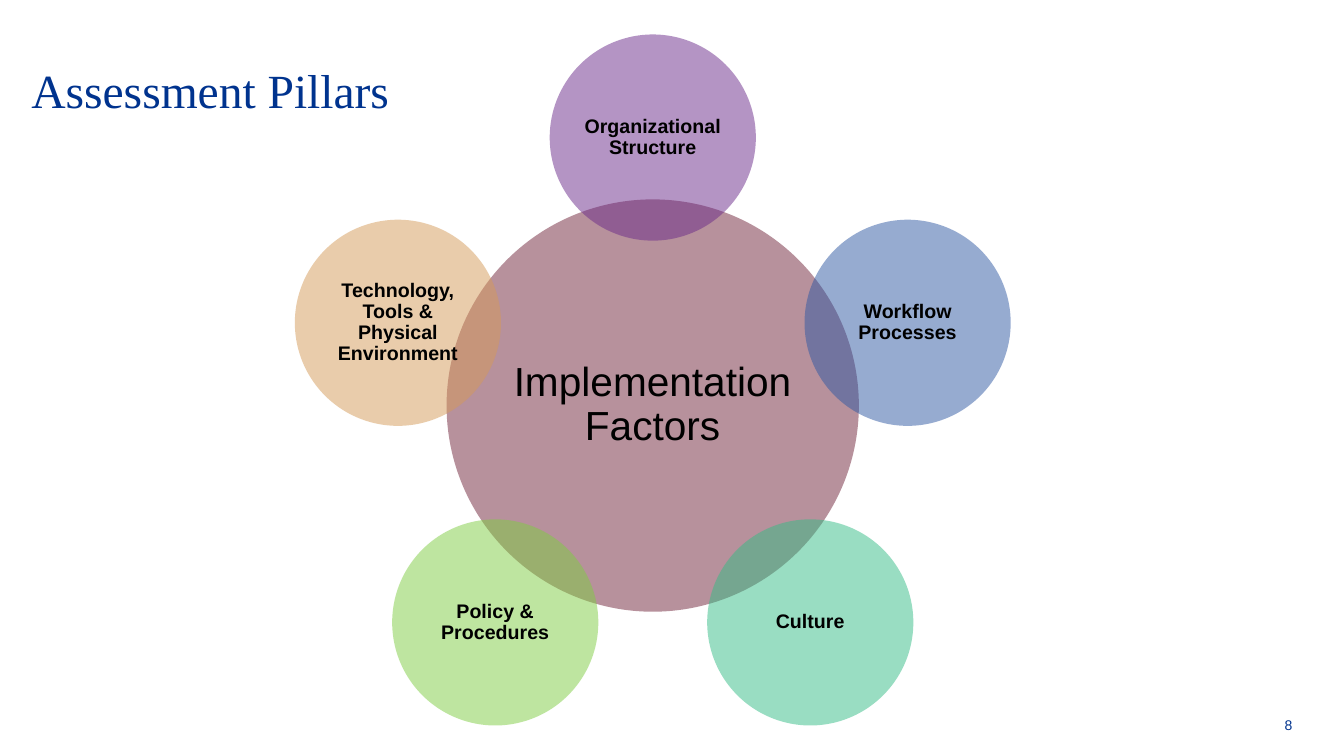
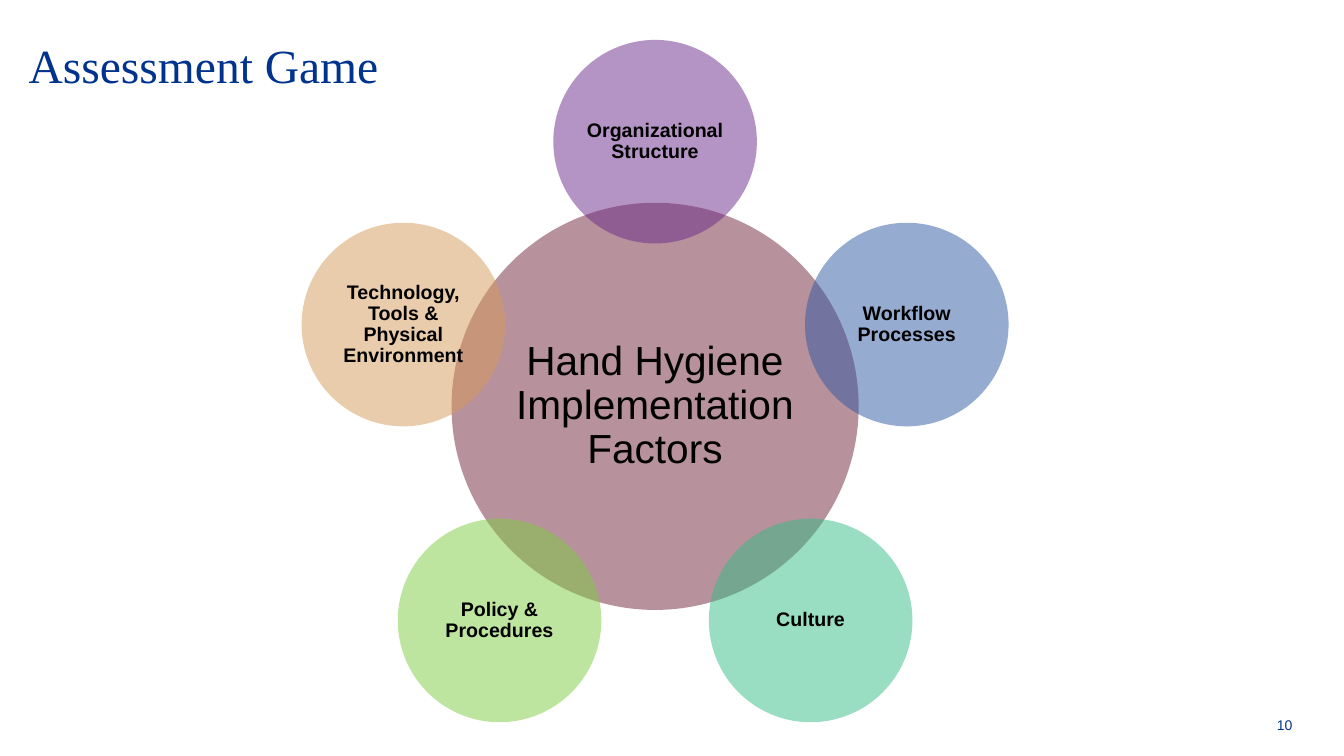
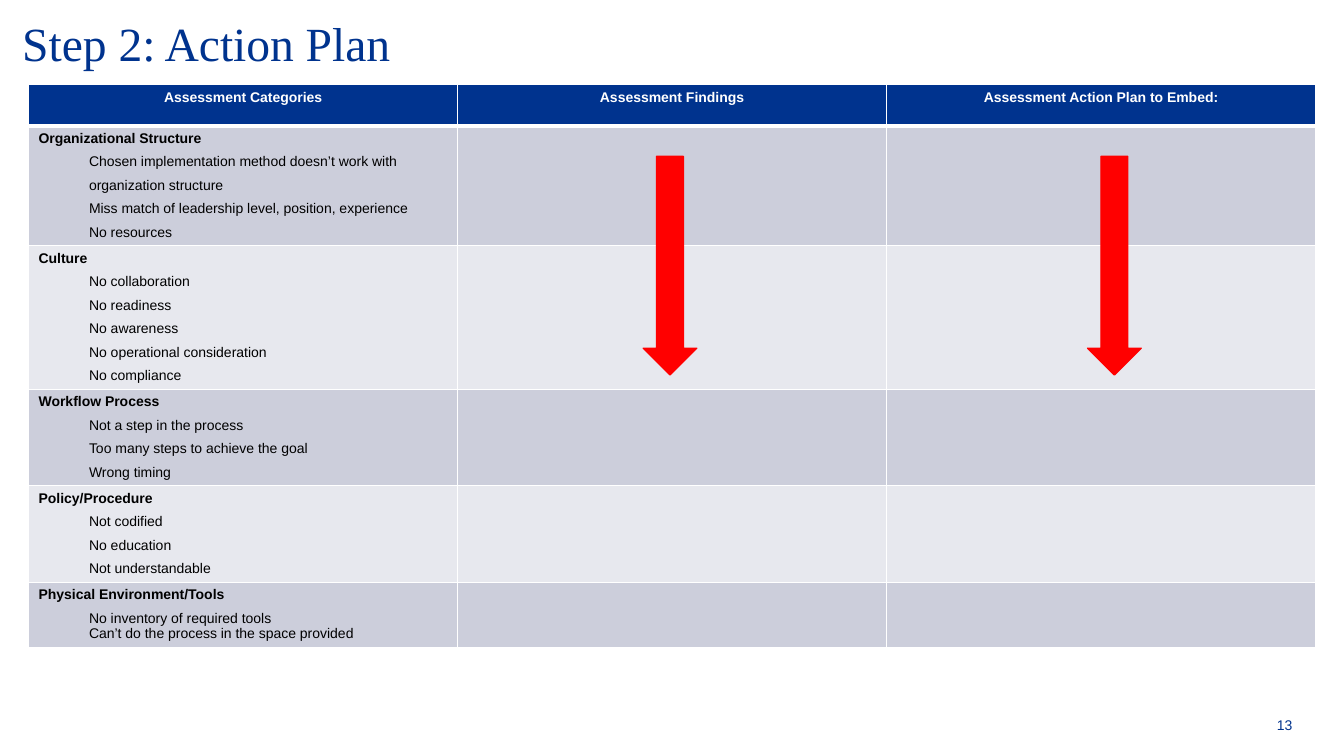
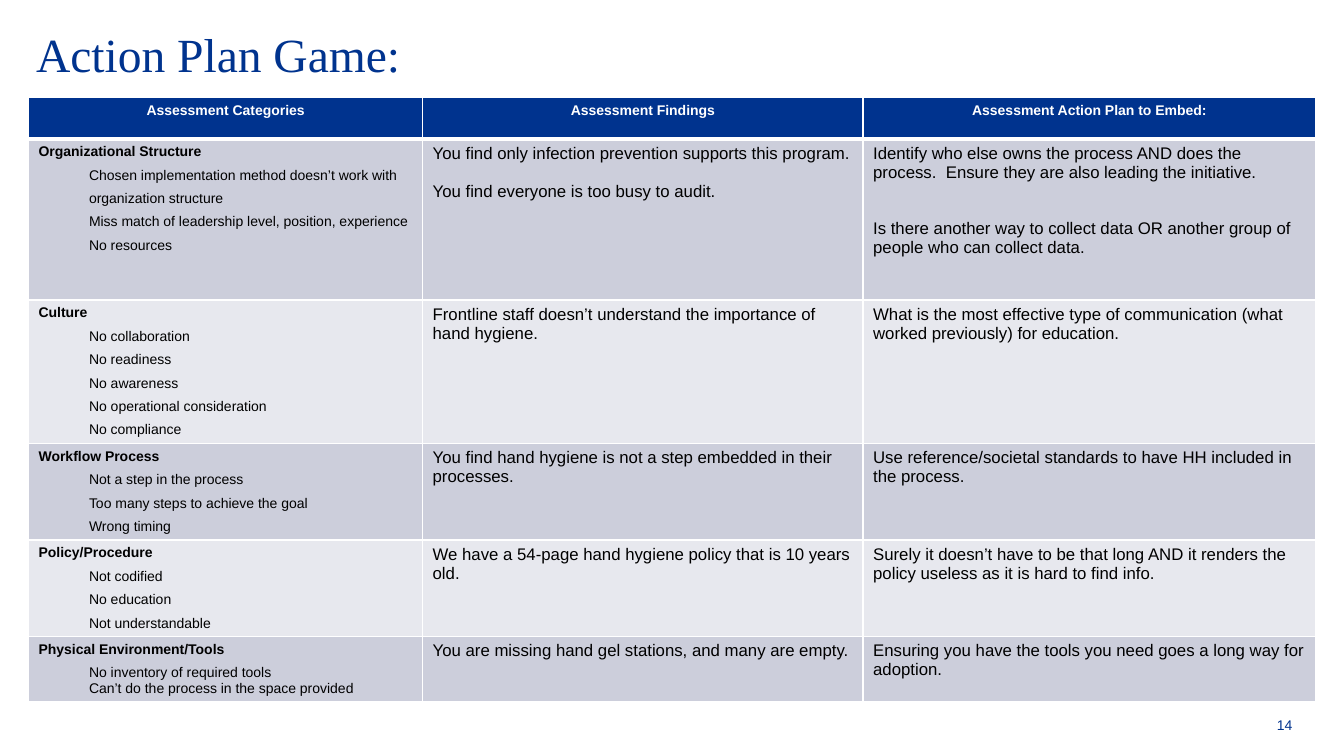
"""Build four slides on assessment pillars and action plans."""
from math import cos, pi, sin

from lxml.etree import SubElement
from pptx import Presentation
from pptx.dml.color import RGBColor
from pptx.enum.shapes import MSO_SHAPE as Shape
from pptx.enum.text import MSO_ANCHOR as Anchor, MSO_AUTO_SIZE as AutoSize, PP_ALIGN as Align
from pptx.oxml.ns import qn
from pptx.util import Cm, Pt

COLORS = {
    "navy": "00338E", "white": "FFFFFF", "black": "000000", "red": "FF0000",
    "band_dark": "CCCEDB", "band_light": "E7E8EE", "hub": "71243A",
    "structure": "6B2A8A", "workflow": "2F59A3", "culture": "34BC86",
    "policy": "7FCD42", "technology": "D59A59",
}
RGB = {name: RGBColor.from_string(code) for name, code in COLORS.items()}

deck = Presentation()
deck.slide_width, deck.slide_height = Cm(33.87), Cm(19.05)


def style(paragraph, size, color="black", bold=False, align=Align.LEFT, face="Arial"):
    """Format a paragraph and its runs."""
    paragraph.alignment = align
    for run in paragraph.runs:
        run.font.name, run.font.size, run.font.bold = face, Pt(size), bold
        run.font.color.rgb = RGB[color]


def start_slide(heading, left, bottom, number):
    """Add a slide with its title and page number."""
    slide = deck.slides.add_slide(deck.slide_layouts[5])
    title = slide.shapes.title
    title.left, title.top, title.width, title.height = Cm(left), Cm(bottom - 1.5), Cm(31.3), Cm(1.5)
    page = slide.shapes.add_textbox(Cm(31.2), Cm(17.86), Cm(1.37), Cm(0.63))
    for box, text, right_margin in ((title, heading, 5.08), (page, number, 0)):
        frame = box.text_frame
        frame.text = text
        frame.word_wrap, frame.auto_size = True, AutoSize.NONE
        frame.vertical_anchor = Anchor.BOTTOM
        frame.margin_left = frame.margin_top = frame.margin_bottom = 0
        frame.margin_right = Cm(right_margin)
    style(title.text_frame.paragraphs[0], 34, "navy", face="Times New Roman")
    title.text_frame.paragraphs[0].line_spacing = Pt(34)
    style(page.text_frame.paragraphs[0], 10, "navy", align=Align.RIGHT)
    return slide


PILLARS = [
    ("Organizational Structure", "structure"),
    ("Workflow Processes", "workflow"),
    ("Culture", "culture"),
    ("Policy & Procedures", "policy"),
    ("Technology, Tools & Physical Environment", "technology"),
]
WHEELS = [
    ("Assessment Pillars", 0.79, 2.97, "8", "Implementation Factors", 16.45, 10.22, 10.39),
    ("Assessment Game", 0.72, 2.34, "10", "Hand Hygiene Implementation Factors", 16.51, 10.24, 10.26),
]
for heading, left, bottom, number, hub_text, center_x, center_y, hub_size in WHEELS:
    slide = start_slide(heading, left, bottom, number)
    circles = [(hub_text, "hub", center_x, center_y, hub_size, 29, False, 0.1)]
    orbit = 0.65 * hub_size
    for position, (pillar, color) in enumerate(PILLARS):
        angle = 2 * pi * position / len(PILLARS)
        x, y = center_x + orbit * sin(angle), center_y - orbit * cos(angle)
        circles.append((pillar, color, x, y, hub_size / 2, 14, True, 0.05))
    for text, color, x, y, size, points, bold, margin in circles:
        circle = slide.shapes.add_shape(
            Shape.OVAL, Cm(x - size / 2), Cm(y - size / 2), Cm(size), Cm(size))
        circle.shadow.inherit = False
        circle.line.fill.background()
        circle.fill.solid()
        circle.fill.fore_color.rgb = RGB[color]
        tint = circle.fill._xPr.find(qn("a:solidFill"))[0]
        SubElement(tint, qn("a:alpha"), val="50000")
        frame = circle.text_frame
        frame.text = text
        frame.word_wrap, frame.vertical_anchor = True, Anchor.MIDDLE
        frame.margin_left = frame.margin_right = Cm(margin)
        frame.margin_top = frame.margin_bottom = Cm(margin)
        style(frame.paragraphs[0], points, bold=bold, align=Align.CENTER)
        frame.paragraphs[0].line_spacing = 0.9

HEADERS = ["Assessment Categories", "Assessment Findings", "Assessment Action Plan to Embed:"]
CATEGORIES = [
    ("Organizational Structure", [
        "Chosen implementation method doesn’t work with organization structure",
        "Miss match of leadership level, position, experience",
        "No resources"]),
    ("Culture", [
        "No collaboration", "No readiness", "No awareness",
        "No operational consideration", "No compliance"]),
    ("Workflow Process", [
        "Not a step in the process", "Too many steps to achieve the goal", "Wrong timing"]),
    ("Policy/Procedure", ["Not codified", "No education", "Not understandable"]),
    ("Physical Environment/Tools", [
        "No inventory of required tools", "Can’t do the process in the space provided"]),
]
GAME_ANSWERS = [
    (["You find only infection prevention supports this program.",
      "You find everyone is too busy to audit."],
     ["Identify who else owns the process AND does the process.  "
      "Ensure they are also leading the initiative.",
      "Is there another way to collect data OR another group of people who can collect data."]),
    (["Frontline staff doesn’t understand the importance of hand hygiene."],
     ["What is the most effective type of communication (what worked previously) for education."]),
    (["You find hand hygiene is not a step embedded in their processes."],
     ["Use reference/societal standards to have HH included in the process."]),
    (["We have a 54-page hand hygiene policy that is 10 years old."],
     ["Surely it doesn’t have to be that long AND it renders the policy useless "
      "as it is hard to find info."]),
    (["You are missing hand gel stations, and many are empty."],
     ["Ensuring you have the tools you need goes a long way for adoption."]),
]
ANSWER_GAPS = [0, 13.6, 27.2]
PLANS = [
    ("Step 2: Action Plan", 0.56, 1.8, "13", 2.13, [10.81] * 3, 3.02, [([], [])] * 5),
    ("Action Plan Game:", 0.91, 2.08, "14", 2.46, [9.93, 11.1, 11.4], 4.06, GAME_ANSWERS),
]
for heading, left, bottom, number, top, widths, first_height, answers in PLANS:
    slide = start_slide(heading, left, bottom, number)
    heights = [1.04, first_height, 3.62, 2.43, 2.43, 1.64]
    plan = slide.shapes.add_table(
        len(heights), len(widths), Cm(0.72), Cm(top), Cm(sum(widths)), Cm(sum(heights))).table
    plan.horz_banding = False
    for column, width in zip(plan.columns, widths):
        column.width = Cm(width)
    for row, height in zip(plan.rows, heights):
        row.height = Cm(height)

    contents = [[[header] for header in HEADERS]]
    for (category, factors), (findings, actions) in zip(CATEGORIES, answers):
        contents.append([[category, *factors], findings, actions])
    for r, row_texts in enumerate(contents):
        for c, texts in enumerate(row_texts):
            cell = plan.cell(r, c)
            for side in "LRTB":
                heavy = (r, side) in ((0, "B"), (1, "T"))
                border = SubElement(cell._tc.get_or_add_tcPr(), qn(f"a:ln{side}"),
                                    w=str(Pt(3 if heavy else 1)))
                SubElement(SubElement(border, qn("a:solidFill")), qn("a:srgbClr"),
                           val=COLORS["white"])
            cell.fill.solid()
            cell.fill.fore_color.rgb = RGB["navy" if r == 0 else "band_dark" if r % 2 else "band_light"]
            cell.text_frame.text = "\n".join(texts)
            for i, paragraph in enumerate(cell.text_frame.paragraphs):
                if r == 0:
                    style(paragraph, 10, "white", True, Align.CENTER)
                elif c > 0:
                    style(paragraph, 12)
                    if i:
                        paragraph.space_before = Pt(ANSWER_GAPS[c])
                else:
                    style(paragraph, 10, bold=i == 0)
                    if i:
                        paragraph._p.get_or_add_pPr().set("marL", str(Cm(1.27)))
                        last_tool = r == len(CATEGORIES) and i == len(texts) - 1
                        paragraph.line_spacing = 1.0 if last_tool else 1.5

    if number == "13":
        for arrow_left in (16.21, 27.41):
            arrow = slide.shapes.add_shape(
                Shape.DOWN_ARROW, Cm(arrow_left), Cm(3.94), Cm(1.35), Cm(5.51))
            arrow.shadow.inherit = False
            arrow.fill.solid()
            arrow.fill.fore_color.rgb = RGB["red"]
            arrow.line.color.rgb = RGB["red"]
            arrow.line.width = Pt(1)

deck.save("out.pptx")
